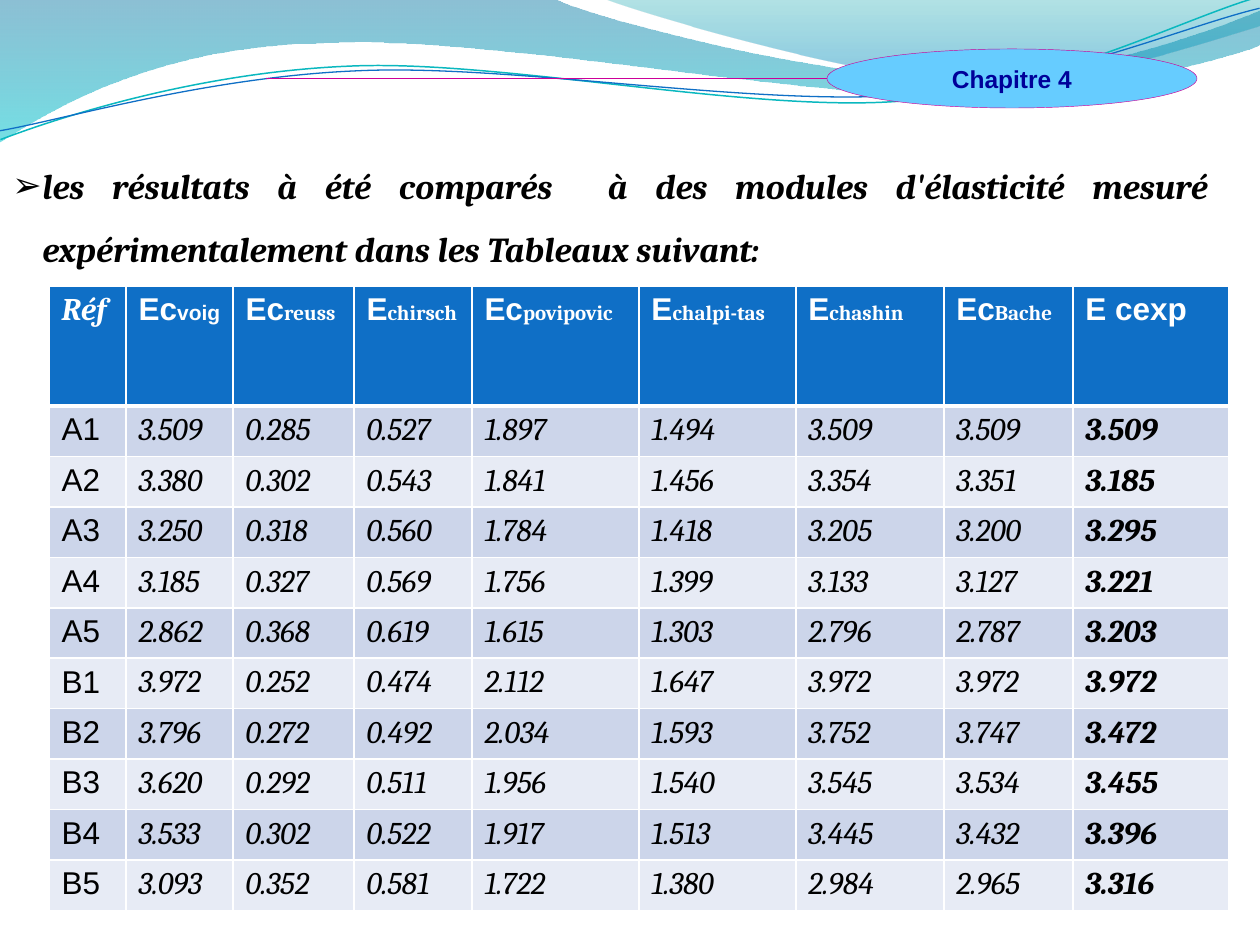
from dataclasses import dataclass

from lxml.etree import SubElement
from pptx import Presentation
from pptx.dml.color import RGBColor
from pptx.enum.shapes import MSO_CONNECTOR, MSO_SHAPE
from pptx.enum.text import MSO_ANCHOR, PP_ALIGN
from pptx.oxml.ns import qn
from pptx.util import Emu, Pt

PX = 914400 / 126


@dataclass(frozen=True)
class Theme:
    sans: str = "Arial"
    serif: str = "Cambria"
    black: str = "000000"
    white: str = "FFFFFF"
    navy: str = "000099"
    sky: str = "66CCFF"
    pink: str = "CC0099"
    teal: str = "0AB8BF"
    blue: str = "0F6FC6"
    bands: tuple = ("CCD5EA", "E7EBF5")
    lead: int = 20
    body: int = 18
    badge: int = 14
    sub: int = 12


THEME = Theme()

# Each curve is (control, control, end); a pair is a straight segment.
WAVE = [(0, 0), (554, -1), (600, 21, 837, 79, 955, 79),
        (1075, 79, 1207, 33, 1260, 11), (1261, 45),
        (1239, 55, 1096, 96, 940, 95), (784, 95, 481, 35, 324, 43),
        (163, 45, 58, 105, -1, 142)]
CREST = [(604, -1), (641, 14, 859, 78, 969, 82),
         (1079, 87, 1211, 40, 1260, 26), (1260, 0)]
# Thin curves lie level here and are tilted once drawn.
TILT = 357.3
UPPER = [(-2, 110), (59, 90, 199, 52, 350, 53),
         (499, 53, 745, 118, 896, 114), (1049, 109, 1184, 45, 1260, 27)]
LOWER = [(-2, 101), (57, 94, 207, 57, 358, 58),
         (509, 58, 750, 112, 902, 108), (1052, 104, 1187, 52, 1262, 38)]

LEAD = ("les résultats à été comparés  à des modules d'élasticité mesuré "
        "expérimentalement dans les Tableaux suivant: ")

# Header: (symbol, suffix, suffix font)
HEADS = [("Réf", "", None), ("Ec", "voig", THEME.sans),
         ("Ec", "reuss", THEME.serif), ("E", "chirsch", THEME.serif),
         ("Ec", "povipovic", THEME.serif), ("E", "chalpi-tas", THEME.serif),
         ("E", "chashin", THEME.serif), ("Ec", "Bache", THEME.serif),
         ("E cexp", "", None)]
WIDTHS = [77, 107, 121, 118, 167, 157, 148, 129, 156]
ROWS = [line.split() for line in """
A1 3.509 0.285 0.527 1.897 1.494 3.509 3.509 3.509
A2 3.380 0.302 0.543 1.841 1.456 3.354 3.351 3.185
A3 3.250 0.318 0.560 1.784 1.418 3.205 3.200 3.295
A4 3.185 0.327 0.569 1.756 1.399 3.133 3.127 3.221
A5 2.862 0.368 0.619 1.615 1.303 2.796 2.787 3.203
B1 3.972 0.252 0.474 2.112 1.647 3.972 3.972 3.972
B2 3.796 0.272 0.492 2.034 1.593 3.752 3.747 3.472
B3 3.620 0.292 0.511 1.956 1.540 3.545 3.534 3.455
B4 3.533 0.302 0.522 1.917 1.513 3.445 3.432 3.396
B5 3.093 0.352 0.581 1.722 1.380 2.984 2.965 3.316
""".strip().splitlines()]


def px(n):
    return Emu(round(n * PX))


def rgb(color):
    return RGBColor.from_string(color)


def style(font, name, size, color, bold=False, italic=False):
    font.name, font.size, font.color.rgb = name, Pt(size), rgb(color)
    font.bold, font.italic = bold, italic


def paint(fill, color):
    fill.solid()
    fill.fore_color.rgb = rgb(color)


def stroke(line, color, width):
    line.color.rgb = rgb(color)
    line.width = Pt(width)


def add_path(slide, steps, close):
    """Draw through all points, then bend each triple into a cubic curve."""
    points = [(px(x), px(y)) for step in steps
              for x, y in zip(step[::2], step[1::2])]
    pen = slide.shapes.build_freeform(*points[0])
    pen.add_line_segments(points[1:], close=close)
    shape = pen.convert_to_shape()
    shape.shadow.inherit = False
    lines = iter(shape._element.xpath(".//a:lnTo"))
    for step in steps[1:]:
        group = [next(lines) for _ in range(len(step) // 2)]
        if len(group) == 3:
            curve = group[0].makeelement(qn("a:cubicBezTo"), {})
            group[0].addprevious(curve)
            for line in group:
                curve.append(line[0])
                line.getparent().remove(line)
    return shape


def add_wave(slide, steps, stops):
    """Filled wave; each stop is (position, colour, opacity in percent)."""
    shape = add_path(slide, steps, True)
    shape.line.fill.background()
    shape.fill.gradient()
    shape.fill.gradient_angle = 270
    for stop, (place, color, _) in zip(shape.fill.gradient_stops, stops):
        stop.position, stop.color.rgb = place, rgb(color)
    tints = shape._element.xpath(".//a:gs/a:srgbClr")
    for tint, (_, _, alpha) in zip(tints, stops):
        SubElement(tint, qn("a:alpha"), val=str(alpha * 1000))


def add_curve(slide, steps, color, width):
    shape = add_path(slide, steps, False)
    shape.rotation = TILT
    shape.fill.background()
    stroke(shape.line, color, width)


def add_badge(slide):
    rule = slide.shapes.add_connector(MSO_CONNECTOR.STRAIGHT, px(266), px(78),
                                      px(832), px(78))
    stroke(rule.line, THEME.pink, 0.25)
    SubElement(rule._element.spPr, qn("a:effectLst"))
    oval = slide.shapes.add_shape(MSO_SHAPE.OVAL, px(827), px(49),
                                  px(370), px(59))
    oval.shadow.inherit = False
    paint(oval.fill, THEME.sky)
    stroke(oval.line, THEME.pink, 0.25)
    frame = oval.text_frame
    frame.word_wrap = False
    frame.vertical_anchor = MSO_ANCHOR.MIDDLE
    para = frame.paragraphs[0]
    para.text, para.alignment = "Chapitre 4", PP_ALIGN.CENTER
    style(para.font, THEME.sans, THEME.badge, THEME.navy, bold=True)


def add_lead(slide):
    box = slide.shapes.add_textbox(0, px(137), px(1221), px(204))
    box.text_frame.word_wrap = True
    para = box.text_frame.paragraphs[0]
    para.text, para.alignment = LEAD, PP_ALIGN.JUSTIFY
    para.line_spacing = 1.5
    style(para.font, THEME.serif, THEME.lead, THEME.black, True, True)
    props = para._p.get_or_add_pPr()
    props.set("marL", str(px(30)))
    props.set("indent", str(px(-30)))
    for tag, attrs in (("a:buFont", {"typeface": THEME.sans}),
                       ("a:buChar", {"char": "➢"})):
        mark = props.makeelement(qn(tag), attrs)
        props.insert_element_before(mark, "a:tabLst", "a:defRPr", "a:extLst")


def dress(cell, color, top, bottom):
    """Set borders first, as they come before the fill."""
    props = cell._tc.get_or_add_tcPr()
    for side, width in (("L", 1), ("R", 1), ("T", top), ("B", bottom)):
        edge = SubElement(props, qn(f"a:ln{side}"), w=str(Pt(width)))
        solid = SubElement(edge, qn("a:solidFill"))
        SubElement(solid, qn("a:srgbClr"), val=THEME.white)
    paint(cell.fill, color)


def fill_head(cell, symbol, suffix, face):
    dress(cell, THEME.blue, 1, 3)
    para = cell.text_frame.paragraphs[0]
    first = symbol == "Réf"
    run = para.add_run()
    run.text = symbol
    style(run.font, THEME.serif if first else THEME.sans, THEME.body,
          THEME.white, True, first)
    if suffix:
        run = para.add_run()
        run.text = suffix
        style(run.font, face, THEME.sub, THEME.white, True)


def add_grid(slide):
    grid = slide.shapes.add_table(len(ROWS) + 1, len(WIDTHS), px(49), px(286),
                                  px(sum(WIDTHS)), px(624)).table
    for col, width in zip(grid.columns, WIDTHS):
        col.width = px(width)
    for row in grid.rows:
        row.height = px(504) // len(ROWS)
    grid.rows[0].height = px(120)
    for c, head in enumerate(HEADS):
        fill_head(grid.cell(0, c), *head)
    last = len(WIDTHS) - 1
    for r, row in enumerate(ROWS, 1):
        for c, value in enumerate(row):
            cell = grid.cell(r, c)
            dress(cell, THEME.bands[(r - 1) % 2], 3 if r == 1 else 1, 1)
            para = cell.text_frame.paragraphs[0]
            para.text = value
            style(para.font, THEME.serif if c else THEME.sans, THEME.body,
                  THEME.black, c == last, c > 0)


def main():
    deck = Presentation()
    deck.slide_width, deck.slide_height = px(1260), px(945)
    slide = deck.slides.add_slide(deck.slide_layouts[6])
    # Wavy banner
    add_wave(slide, WAVE, [(0, "0074A1", 45), (1, "00C6CF", 55)])
    add_wave(slide, CREST, [(0, "00A1A9", 30), (0.8, "008BBF", 45)])
    add_curve(slide, UPPER, THEME.teal, 0.85)
    add_curve(slide, LOWER, THEME.blue, 0.75)
    # Chapter badge, lead sentence and results
    add_badge(slide)
    add_lead(slide)
    add_grid(slide)
    deck.save("out.pptx")


if __name__ == "__main__":
    main()
